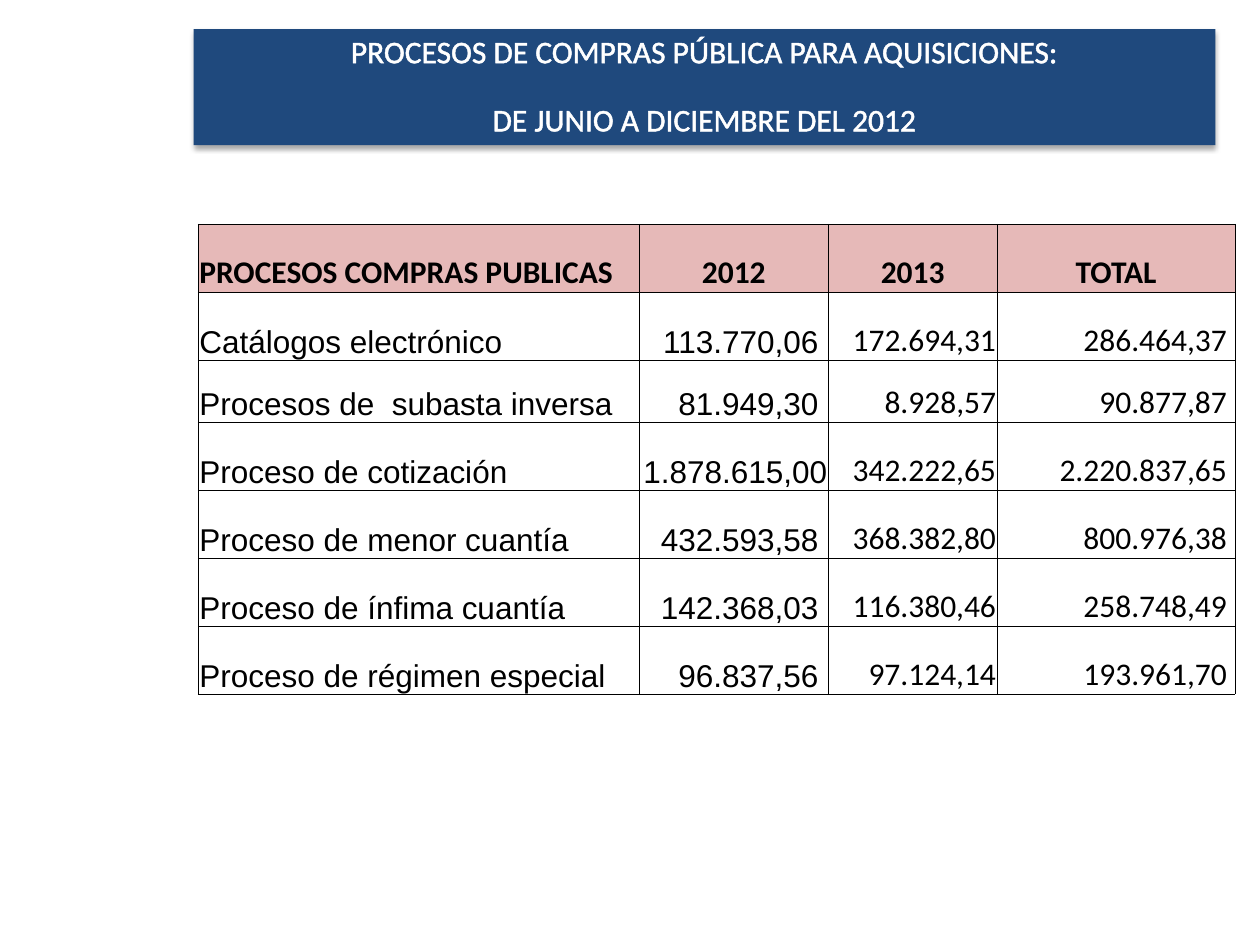
from lxml import etree
from pptx import Presentation
from pptx.dml.color import RGBColor
from pptx.enum.shapes import MSO_SHAPE as Shape
from pptx.enum.text import MSO_ANCHOR as Anchor, PP_ALIGN as Align
from pptx.oxml import parse_xml
from pptx.util import Pt

DRAWING = 'xmlns:a="http://schemas.openxmlformats.org/drawingml/2006/main"'


def color(value):
    return RGBColor.from_string(value)


def write(para, text, font="Calibri", ink="000000", bold=False, align=Align.LEFT):
    para.alignment = align
    span = para.add_run()
    span.text = text
    span.font.name = font
    span.font.size = Pt(18)
    span.font.bold = bold
    span.font.color.rgb = color(ink)
    return span


deck = Presentation()
deck.slide_width, deck.slide_height = Pt(720), Pt(540)
page = deck.slides.add_slide(deck.slide_layouts[6])

# Title banner with a soft shadow
banner = page.shapes.add_shape(Shape.RECTANGLE, Pt(110.6), Pt(16.6), Pt(584), Pt(66.3))
banner.fill.solid()
banner.fill.fore_color.rgb = color("1F497D")
banner.line.fill.background()
banner.shadow.inherit = False
effects = banner._element.spPr.find("{*}effectLst")
effects.append(parse_xml(
    f'<a:outerShdw {DRAWING} blurRad="{Pt(3.1)}" dist="{Pt(1.8)}" dir="5400000" rotWithShape="0">'
    '<a:srgbClr val="000000"><a:alpha val="35000"/></a:srgbClr></a:outerShdw>'))

frame = banner.text_frame
frame.word_wrap = True
frame.vertical_anchor = Anchor.MIDDLE
titles = ["PROCESOS DE COMPRAS PÚBLICA PARA AQUISICIONES:", "DE JUNIO A DICIEMBRE DEL 2012"]
for index, title in enumerate(titles):
    para = frame.add_paragraph() if index else frame.paragraphs[0]
    para.line_spacing = 0.9
    para.space_before = Pt(19.5 if index else 0)
    span = write(para, title, ink="FFFFFF", align=Align.CENTER)
    span.font._element.insert(0, parse_xml(
        f'<a:ln {DRAWING} w="{Pt(1.45)}"><a:solidFill><a:srgbClr val="FFFFFF"/></a:solidFill></a:ln>'))

# Purchasing table
rows = [
    ["PROCESOS COMPRAS PUBLICAS", "2012", "2013", "TOTAL"],
    ["Catálogos electrónico", "113.770,06 ", "172.694,31", "286.464,37 "],
    ["Procesos de  subasta inversa", "81.949,30 ", "8.928,57", "90.877,87 "],
    ["Proceso de cotización", "1.878.615,00 ", "342.222,65", "2.220.837,65 "],
    ["Proceso de menor cuantía", "432.593,58 ", "368.382,80", "800.976,38 "],
    ["Proceso de ínfima cuantía", "142.368,03 ", "116.380,46", "258.748,49 "],
    ["Proceso de régimen especial", "96.837,56 ", "97.124,14", "193.961,70 "],
]
widths = [252, 108, 96.5, 136]
heights = [38.86, 38.86, 35.4] + [38.86] * 4
table = page.shapes.add_table(len(rows), len(widths), Pt(113.3), Pt(128.2),
                              Pt(sum(widths)), Pt(sum(heights))).table
table.first_row = table.horz_banding = False
for column, width in zip(table.columns, widths):
    column.width = Pt(width)

for r, values in enumerate(rows):
    table.rows[r].height = Pt(heights[r])
    for c, value in enumerate(values):
        cell = table.cell(r, c)
        cell.vertical_anchor = Anchor.BOTTOM
        cell.margin_left = cell.margin_right = cell.margin_top = Pt(0.6)
        cell.margin_bottom = 0
        para = cell.text_frame.paragraphs[0]
        if r == 0:
            cell.fill.solid()
            cell.fill.fore_color.rgb = color("E6B9B8")
            write(para, value, bold=True, align=Align.CENTER if c else Align.LEFT)
        else:
            cell.fill.background()
            write(para, value, font="Arial" if c < 2 else "Calibri",
                  align=Align.RIGHT if c else Align.JUSTIFY)

        # Thin black borders, placed ahead of the fill
        properties = cell._tc.get_or_add_tcPr()
        for position, side in enumerate("LRTB"):
            border = etree.fromstring(
                f'<a:ln{side} {DRAWING} w="{Pt(0.5)}"><a:solidFill>'
                f'<a:srgbClr val="000000"/></a:solidFill></a:ln{side}>')
            properties.insert(position, border)

deck.save("out.pptx")
